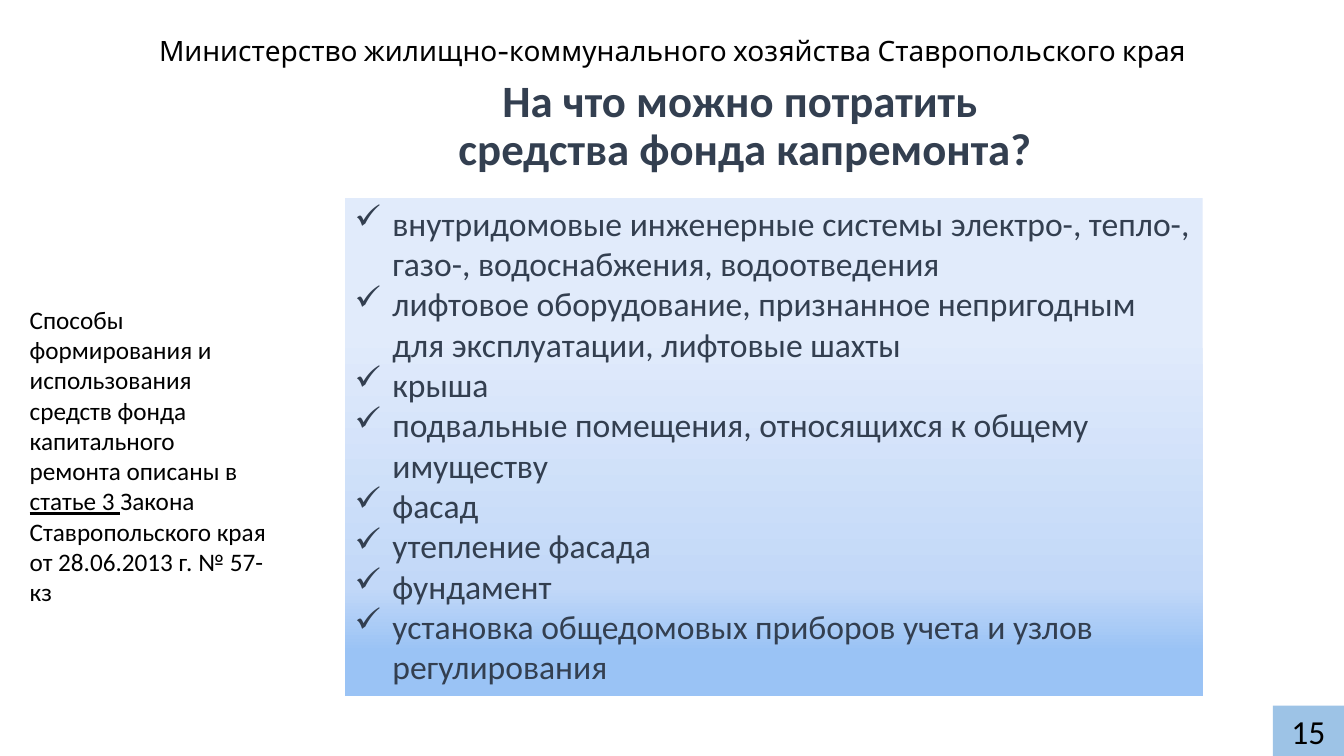
from copy import deepcopy
from dataclasses import dataclass

from lxml import etree
from pptx import Presentation
from pptx.dml.color import RGBColor
from pptx.enum.shapes import MSO_SHAPE
from pptx.enum.text import MSO_ANCHOR, MSO_AUTO_SIZE, PP_ALIGN
from pptx.oxml.ns import qn
from pptx.util import Cm, Pt

LEFT, CENTER = PP_ALIGN.LEFT, PP_ALIGN.CENTER
TOP, MIDDLE = MSO_ANCHOR.TOP, MSO_ANCHOR.MIDDLE
RECTANGLE = MSO_SHAPE.RECTANGLE
NO_AUTOFIT = MSO_AUTO_SIZE.NONE

BLACK = RGBColor(0x00, 0x00, 0x00)
SLATE = RGBColor(0x33, 0x3F, 0x50)
BADGE_BLUE = RGBColor(0x9D, 0xC3, 0xE6)
GRADIENT = (
    (0.27, RGBColor(0xE1, 0xEB, 0xFB)),
    (0.78, RGBColor(0xC2, 0xD8, 0xF8)),
    (0.91, RGBColor(0x9A, 0xC3, 0xF5)),
)
BULLET_INDENT = Cm(0.95)

REPAIR_ITEMS = (
    "внутридомовые инженерные системы электро-, тепло-, газо-, водоснабжения, водоотведения",
    "лифтовое оборудование, признанное непригодным для эксплуатации, лифтовые шахты",
    "крыша",
    "подвальные помещения, относящихся к общему имуществу",
    "фасад",
    "утепление фасада",
    "фундамент",
    "установка общедомовых приборов учета и узлов регулирования",
)
LAW_NOTE = (
    "Способы формирования и использования средств фонда капитального ремонта описаны в ",
    "статье 3 ",
    "Закона Ставропольского края от 28.06.2013 г. № 57-кз",
)


@dataclass(frozen=True)
class Box:
    left: float
    top: float
    width: float
    height: float

    def lengths(self) -> tuple:
        return Cm(self.left), Cm(self.top), Cm(self.width), Cm(self.height)


@dataclass(frozen=True)
class TextStyle:
    size: int
    color: RGBColor
    font: str = "Calibri"
    bold: bool = False
    align: PP_ALIGN = LEFT
    anchor: MSO_ANCHOR = TOP
    spacing: float = 1.0
    bullet: str = ""


def add_bullet(paragraph, char: str) -> None:
    props = paragraph._p.get_or_add_pPr()
    props.set("marL", str(BULLET_INDENT))
    props.set("indent", str(-BULLET_INDENT))
    etree.SubElement(props, qn("a:buChar")).set("char", char)


def write(shape, paragraphs: tuple, style: TextStyle) -> None:
    """Each paragraph is a tuple of run texts."""
    frame = shape.text_frame
    frame.word_wrap = True
    frame.auto_size = NO_AUTOFIT
    frame.vertical_anchor = style.anchor
    for index, runs in enumerate(paragraphs):
        paragraph = frame.add_paragraph() if index else frame.paragraphs[0]
        for text in runs:
            paragraph.add_run().text = text
        if style.bullet:
            add_bullet(paragraph, style.bullet)
        paragraph.alignment = style.align
        paragraph.line_spacing = style.spacing
        paragraph.space_before = Pt(0)
        paragraph.font.name = style.font
        paragraph.font.size = Pt(style.size)
        paragraph.font.bold = style.bold
        paragraph.font.color.rgb = style.color


def add_text(slide, box: Box, paragraphs: tuple, style: TextStyle):
    shape = slide.shapes.add_textbox(*box.lengths())
    write(shape, paragraphs, style)
    return shape


def add_panel(slide, box: Box, paragraphs: tuple, style: TextStyle):
    shape = slide.shapes.add_shape(RECTANGLE, *box.lengths())
    shape.shadow.inherit = False
    shape.line.fill.background()
    write(shape, paragraphs, style)
    return shape


def fill_gradient(shape) -> None:
    """Three stops running from top to bottom."""
    shape.fill.gradient()
    shape.fill.gradient_angle = 270
    stop_list = shape._element.spPr.find(qn("a:gradFill")).find(qn("a:gsLst"))
    stop_list.append(deepcopy(stop_list[-1]))
    for stop, (position, color) in zip(shape.fill.gradient_stops, GRADIENT):
        stop.position = position
        stop.color.rgb = color


def main() -> None:
    prs = Presentation()
    prs.slide_width, prs.slide_height = Cm(33.87), Cm(19.05)
    slide = prs.slides.add_slide(prs.slide_layouts[5])

    # Ministry name
    add_text(slide, Box(2.34, 0.76, 29.21, 1.12),
             (("Министерство жилищно-коммунального хозяйства Ставропольского края",),),
             TextStyle(20, BLACK, font="Cabin", align=CENTER, anchor=MIDDLE, spacing=0.9))

    # Title
    title = slide.shapes.title
    title.left, title.top, title.width, title.height = Box(7.77, 1.85, 22.02, 2.72).lengths()
    write(title, (("На что можно потратить ",), ("средства фонда капремонта?",)),
          TextStyle(32, SLATE, bold=True, align=CENTER, spacing=0.9))

    # Reference to the law, with the article underlined
    law_note = add_text(slide, Box(0.5, 7.54, 6.45, 7.95), (LAW_NOTE,), TextStyle(18, BLACK))
    law_note.text_frame.paragraphs[0].runs[1].font.underline = True

    # Checklist of permitted works
    checklist = add_panel(slide, Box(8.69, 4.98, 21.62, 12.57),
                          tuple((item,) for item in REPAIR_ITEMS),
                          TextStyle(24, SLATE, bullet="✓"))
    fill_gradient(checklist)

    # Page number
    page_badge = add_panel(slide, Box(32.08, 17.78, 1.79, 1.27), (("15",),),
                           TextStyle(24, BLACK, align=CENTER))
    page_badge.fill.solid()
    page_badge.fill.fore_color.rgb = BADGE_BLUE

    prs.save("out.pptx")


if __name__ == "__main__":
    main()
